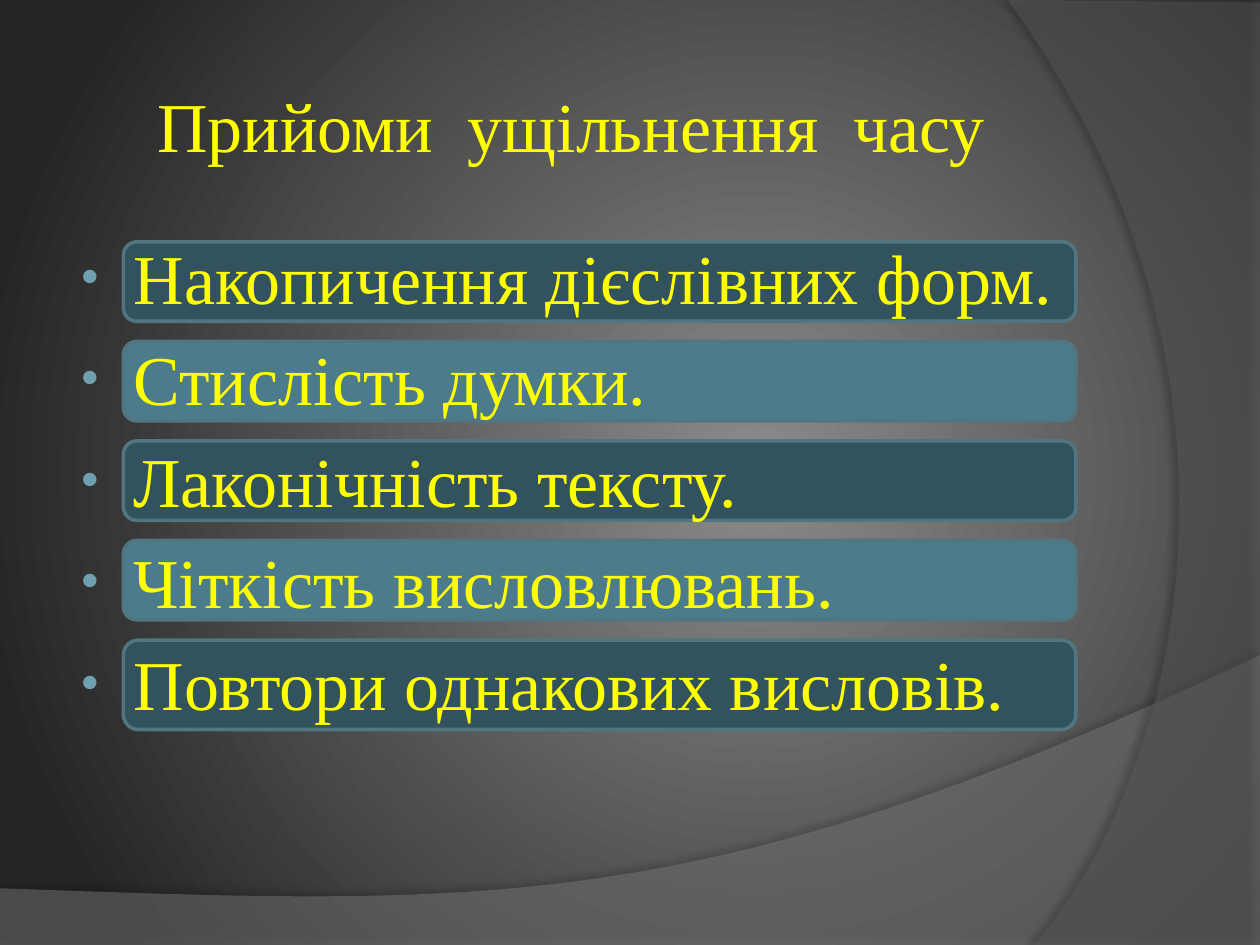
from lxml import etree
from pptx import Presentation
from pptx.dml.color import RGBColor
from pptx.enum.shapes import MSO_SHAPE
from pptx.enum.text import MSO_ANCHOR, MSO_AUTO_SIZE, PP_ALIGN
from pptx.oxml.ns import qn
from pptx.util import Inches, Pt

ROUNDED = MSO_SHAPE.ROUNDED_RECTANGLE
LEFT, MIDDLE, TOP = PP_ALIGN.LEFT, MSO_ANCHOR.MIDDLE, MSO_ANCHOR.TOP
NO_AUTOFIT = MSO_AUTO_SIZE.NONE

FONT, TEXT_SIZE = "Times New Roman", Pt(40)
COLORS = {
    "center": "8B8B8B", "edge": "252525", "text": "FFFF00",
    "dark bar": "32525D", "light bar": "4C7C8B", "bar line": "517682",
    "bullet": "6EA0B0", "bottom wave": "7F7F7F", "right wave": "5E5E5E",
    "shadow": "000000",
}
TITLE = "Прийоми  ущільнення  часу"
TECHNIQUES = [
    "Накопичення дієслівних форм.",
    "Стислість думки.",
    "Лаконічність тексту.",
    "Чіткість висловлювань.",
    "Повтори однакових висловів.",
]


def add_xml(parent, tag, **attributes):
    return etree.SubElement(parent, qn(tag), attributes)


def format_text(paragraph):
    paragraph.alignment = LEFT
    for run in paragraph.runs:
        run.font.name = FONT
        run.font.size = TEXT_SIZE
        run.font.color.rgb = RGBColor.from_string(COLORS["text"])


presentation = Presentation()
presentation.slide_width = Inches(10)
presentation.slide_height = Inches(7.5)
slide = presentation.slides.add_slide(presentation.slide_layouts[1])
shapes = slide.shapes

# Background: circular gradient, centred right of the middle
background_fill = slide.background.fill
background_fill.gradient()
for stop, name in zip(background_fill.gradient_stops, ("center", "edge")):
    stop.color.rgb = RGBColor.from_string(COLORS[name])
gradient = slide.element.find(".//" + qn("a:gradFill"))
gradient.remove(gradient.find(qn("a:lin")))
circle = add_xml(gradient, "a:path", path="circle")
add_xml(circle, "a:fillToRect", l="60000", t="50000", r="40000", b="50000")

# Waves: straight corners, then one Bezier curve that starts at the last corner
waves = [
    ("bottom wave", [(0, 7.05), (0, 7.5), (10, 7.5), (10, 5.2)],
     [(5.59, 7.29), (3.91, 7.19), (0, 7.05)], 45, 35, 3.5, 270),
    ("right wave", [(10, 0.02), (10, 7.5), (8.21, 7.5)],
     [(9.35, 6.19), (10.18, 3), (8, 0)], 40, 45, 4, 180),
]
STEPS = 40
for name, corners, curve, opacity, shadow_opacity, distance, angle in waves:
    controls = [corners[-1], *curve]
    outline = list(corners)
    for step in range(1, STEPS + 1):
        t = step / STEPS
        weights = ((1 - t) ** 3, 3 * t * (1 - t) ** 2, 3 * t * t * (1 - t), t ** 3)
        outline.append(tuple(sum(weight * point[axis] for weight, point in zip(weights, controls))
                             for axis in (0, 1)))
    points = [(Inches(x), Inches(y)) for x, y in outline]
    builder = shapes.build_freeform(*points[0])
    builder.add_line_segments(points[1:], close=True)
    wave = builder.convert_to_shape()
    wave.fill.solid()
    wave.fill.fore_color.rgb = RGBColor.from_string(COLORS[name])
    wave.line.fill.background()
    wave.shadow.inherit = False
    properties = wave.element.spPr
    add_xml(properties.find(".//" + qn("a:srgbClr")), "a:alpha", val=str(opacity * 1000))
    shadow = add_xml(properties.find(qn("a:effectLst")), "a:outerShdw",
                     blurRad=str(Pt(4)), dist=str(Pt(distance)),
                     dir=str(angle * 60000), rotWithShape="0")
    shadow_color = add_xml(shadow, "a:srgbClr", val=COLORS["shadow"])
    add_xml(shadow_color, "a:alpha", val=str(shadow_opacity * 1000))

# Bars behind the list, in alternating colours; the last one is taller
BAR_TOP, BAR_PITCH = 1.92, 0.79
for row in range(len(TECHNIQUES)):
    height = 0.71 if row == len(TECHNIQUES) - 1 else 0.63
    bar = shapes.add_shape(ROUNDED, Inches(0.98), Inches(BAR_TOP + row * BAR_PITCH),
                           Inches(7.56), Inches(height))
    bar.shadow.inherit = False
    bar.fill.solid()
    bar.fill.fore_color.rgb = RGBColor.from_string(COLORS["light bar" if row % 2 else "dark bar"])
    bar.line.color.rgb = RGBColor.from_string(COLORS["bar line"])
    bar.line.width = Pt(2)

# Title and list stand in front of the bars
title, body = shapes.title, slide.placeholders[1]
for placeholder, box, anchor in ((title, (0.64, 0.36, 8.17, 1.25), MIDDLE),
                                 (body, (0.5, 1.75, 8.17, 4.95), TOP)):
    shapes.element.append(placeholder.element)
    placeholder.left, placeholder.top, placeholder.width, placeholder.height = map(Inches, box)
    text_frame = placeholder.text_frame
    text_frame.word_wrap = True
    text_frame.auto_size = NO_AUTOFIT
    text_frame.vertical_anchor = anchor

title.text_frame.text = TITLE
title.text_frame.margin_left = Inches(0.61)
format_text(title.text_frame.paragraphs[0])

body.text_frame.text = "\n".join(TECHNIQUES)
body.text_frame.margin_top = Inches(0.11)
for row, paragraph in enumerate(body.text_frame.paragraphs):
    properties = paragraph._p.get_or_add_pPr()
    properties.set("marL", str(Inches(0.46)))
    properties.set("indent", str(Inches(-0.42)))
    add_xml(add_xml(properties, "a:buClr"), "a:srgbClr", val=COLORS["bullet"])
    add_xml(properties, "a:buSzPct", val="80000")
    add_xml(properties, "a:buFont", typeface=FONT)
    add_xml(properties, "a:buChar", char="•")
    paragraph.space_before = Pt(10 if row else 0)
    format_text(paragraph)

presentation.save("out.pptx")
